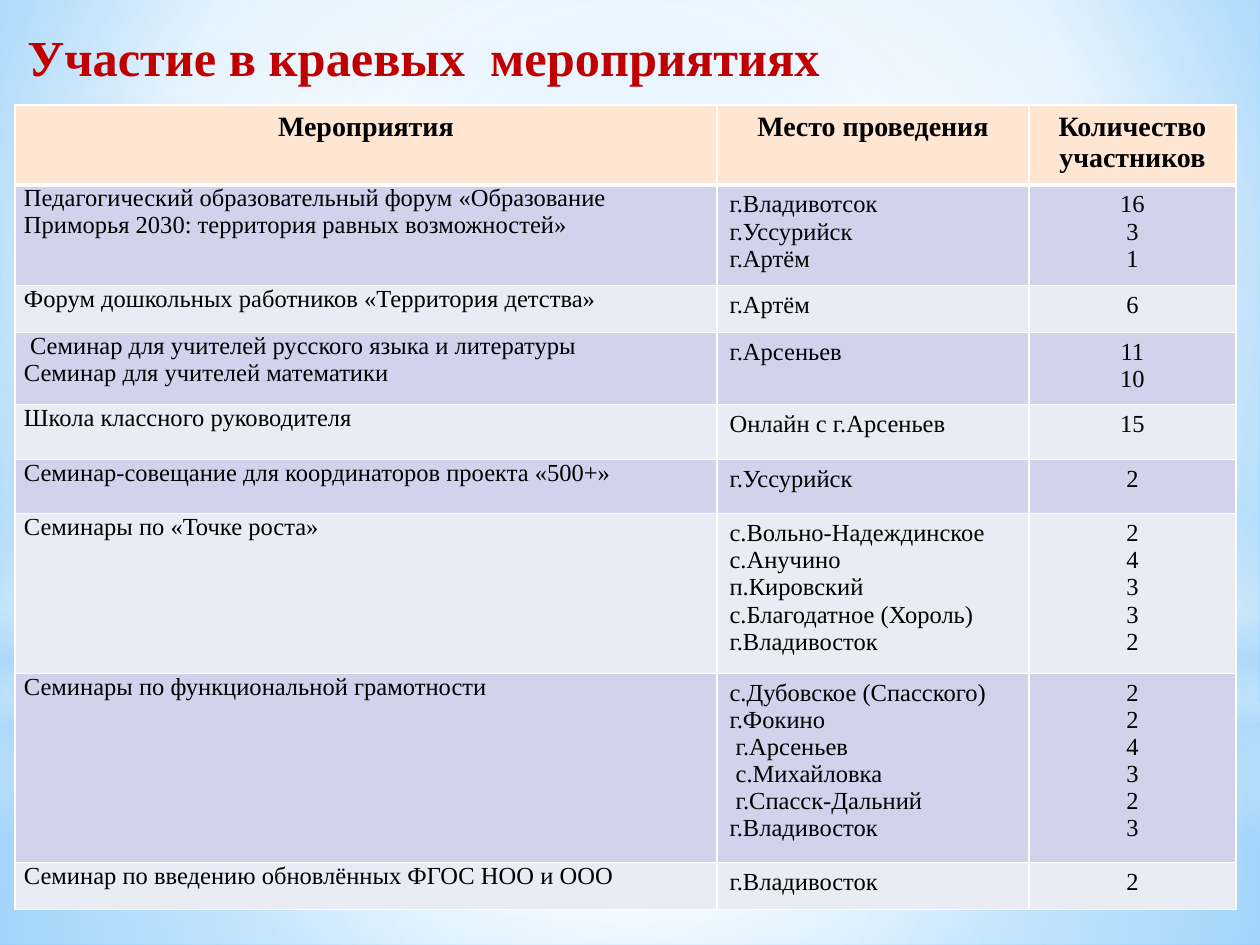
"""Build the slide on regional events and the number of people who took part."""
import pptx
import pptx.dml.color
import pptx.enum.shapes
import pptx.enum.text
import pptx.oxml
import pptx.oxml.ns
import pptx.util

RGB = pptx.dml.color.RGBColor
SHAPE = pptx.enum.shapes.MSO_SHAPE
ALIGN = pptx.enum.text.PP_ALIGN
WHITE = RGB(0xFF, 0xFF, 0xFF)
BLACK = RGB(0, 0, 0)
RED = RGB(0xC0, 0, 0)
PEACH = RGB(0xFF, 0xE6, 0xD3)
LILAC = RGB(0xD0, 0xD3, 0xEB)
PALE = RGB(0xE9, 0xEB, 0xF5)
SKY = RGB(0x9E, 0xD5, 0xFF)
BLUE = RGB(0x5B, 0xB9, 0xFF)
MIST = RGB(0xB4, 0xDC, 0xFA)
CENTRE = (50, 50, 50, 50)

COLS = [702, 312, 207]
ROWS = [75, 99, 47, 72, 55, 54, 148, 175, 47]
HEAD = ["Мероприятия", "Место проведения", "Количество участников"]
EVENTS = [
    ("Педагогический образовательный форум «Образование Приморья 2030: территория равных возможностей»",
     "г.Владивотсок\nг.Уссурийск\nг.Артём", "16\n3\n1"),
    ("Форум дошкольных работников «Территория детства»", "г.Артём", "6"),
    (" Семинар для учителей русского языка и литературы\nСеминар для учителей математики",
     "г.Арсеньев", "11\n10"),
    ("Школа классного руководителя", "Онлайн с г.Арсеньев", "15"),
    ("Семинар-совещание для координаторов проекта «500+»", "г.Уссурийск", "2"),
    ("Семинары по «Точке роста»",
     "с.Вольно-Надеждинское\nс.Анучино\nп.Кировский\nс.Благодатное (Хороль)\nг.Владивосток",
     "2\n4\n3\n3\n2"),
    ("Семинары по функциональной грамотности",
     "с.Дубовское (Спасского)\nг.Фокино\n г.Арсеньев\n с.Михайловка\n г.Спасск-Дальний\nг.Владивосток",
     "2\n2\n4\n3\n2\n3"),
    ("Семинар по введению обновлённых ФГОС НОО и ООО", "г.Владивосток", "2"),
]


def px(*sizes):
    """Turn px lengths into EMU."""
    return [round(size * 914400 / 126) for size in sizes]


class Deck:
    """Hold the style and the current slide."""

    font = "Times New Roman"

    def __init__(self):
        self.show = pptx.Presentation()
        self.show.slide_width, self.show.slide_height = px(1260, 945)
        self.slide = self.show.slides.add_slide(self.show.slide_layouts[6])

    def blend(self, fill, root, stops, focus):
        """Give a fill a round gradient, or a downward one if focus is None."""
        fill.gradient()
        marks = "".join(
            f'<a:gs pos="{pos * 1000}"><a:srgbClr val="{tint}">'
            f'<a:alpha val="{alpha * 1000}"/></a:srgbClr></a:gs>'
            for pos, tint, alpha in stops)
        shade = '<a:lin ang="5400000" scaled="0"/>'
        if focus:
            rect = " ".join(f'{side}="{part * 1000}"' for side, part in zip("ltrb", focus))
            shade = f'<a:path path="circle"><a:fillToRect {rect}/></a:path>'
        old = root.find(".//" + pptx.oxml.ns.qn("a:gradFill"))
        old.getparent().replace(old, pptx.oxml.parse_xml(
            f'<a:gradFill rotWithShape="1" {pptx.oxml.ns.nsdecls("a")}>'
            f'<a:gsLst>{marks}</a:gsLst>{shade}</a:gradFill>'))

    def back(self, stops, focus):
        """Paint the slide background."""
        self.blend(self.slide.background.fill, self.slide.element, stops, focus)

    def glow(self, kind, box, stops, focus=CENTRE):
        """Add a shape with a soft gradient."""
        shape = self.slide.shapes.add_shape(kind, *px(*box))
        shape.shadow.inherit = False
        shape.line.fill.background()
        self.blend(shape.fill, shape.element, stops, focus)

    def label(self, frame, text, size, tint=BLACK, bold=False, align=ALIGN.LEFT):
        """Fill a text frame, one paragraph a line."""
        frame.text = text
        style = {"name": self.font, "size": pptx.util.Pt(size), "bold": bold}
        for para in frame.paragraphs:
            para.alignment = align
            for run in para.runs:
                run.font.color.rgb = tint
                for key, value in style.items():
                    setattr(run.font, key, value)

    def title(self, box, text):
        """Add the heading."""
        frame = self.slide.shapes.add_textbox(*px(*box)).text_frame
        frame.word_wrap = True
        self.label(frame, text, 28.8, RED, True)

    def edge(self, cell, sides):
        """Draw white cell borders of the given widths."""
        props = cell._tc.get_or_add_tcPr()
        for side, width in sides.items():
            props.append(pptx.oxml.parse_xml(
                f'<a:ln{side} w="{width * 12700}" {pptx.oxml.ns.nsdecls("a")}>'
                f'<a:solidFill><a:srgbClr val="{WHITE}"/></a:solidFill></a:ln{side}>'))

    def table(self, left, top, cols, rows, data):
        """Add the table with a header and banded rows."""
        box = px(left, top, sum(cols), sum(rows))
        grid = self.slide.shapes.add_table(len(rows), len(cols), *box).table
        for col, width in zip(grid.columns, px(*cols)):
            col.width = width
        for row, height in zip(grid.rows, px(*rows)):
            row.height = height
        for r, line in enumerate(data):
            for c, text in enumerate(line):
                cell = grid.cell(r, c)
                head = r == 0
                if c == 0 and not head:
                    side = px(9)[0]
                    margins = {"margin_left": side, "margin_right": side,
                               "margin_top": 0, "margin_bottom": 0}
                    for key, value in margins.items():
                        setattr(cell, key, value)
                self.edge(cell, {"L": 1, "R": 1, "T": 3 if r == 1 else 1, "B": 3 if head else 1})
                cell.fill.solid()
                cell.fill.fore_color.rgb = PEACH if head else LILAC if r % 2 else PALE
                align = ALIGN.CENTER if head or c == 2 else ALIGN.LEFT
                self.label(cell.text_frame, text, 16 if head else 14, bold=head, align=align)


def main():
    """Build and save the slide."""
    deck = Deck()
    deck.back([(0, SKY, 100), (60, WHITE, 100), (100, BLUE, 100)], (20, 10, 20, 60))
    deck.glow(SHAPE.RECTANGLE, (0, 703, 1260, 242),
              [(0, WHITE, 91), (37, WHITE, 76), (100, MIST, 79)])
    deck.glow(SHAPE.RECTANGLE, (0, 0, 1260, 703),
              [(0, WHITE, 89), (48, WHITE, 62), (100, MIST, 79)])
    deck.glow(SHAPE.RECTANGLE, (0, 519, 1260, 315),
              [(0, WHITE, 0), (29, WHITE, 30), (45, MIST, 40),
               (55, WHITE, 26), (65, MIST, 60), (100, WHITE, 0)], None)
    deck.glow(SHAPE.OVAL, (0, 221, 1260, 703), [(0, WHITE, 100), (56, WHITE, 0)])
    deck.title((15, 20, 1134, 70), "Участие в краевых  мероприятиях")
    deck.table(15, 105, COLS, ROWS, [HEAD, *EVENTS])
    deck.show.save("out.pptx")


if __name__ == "__main__":
    main()
